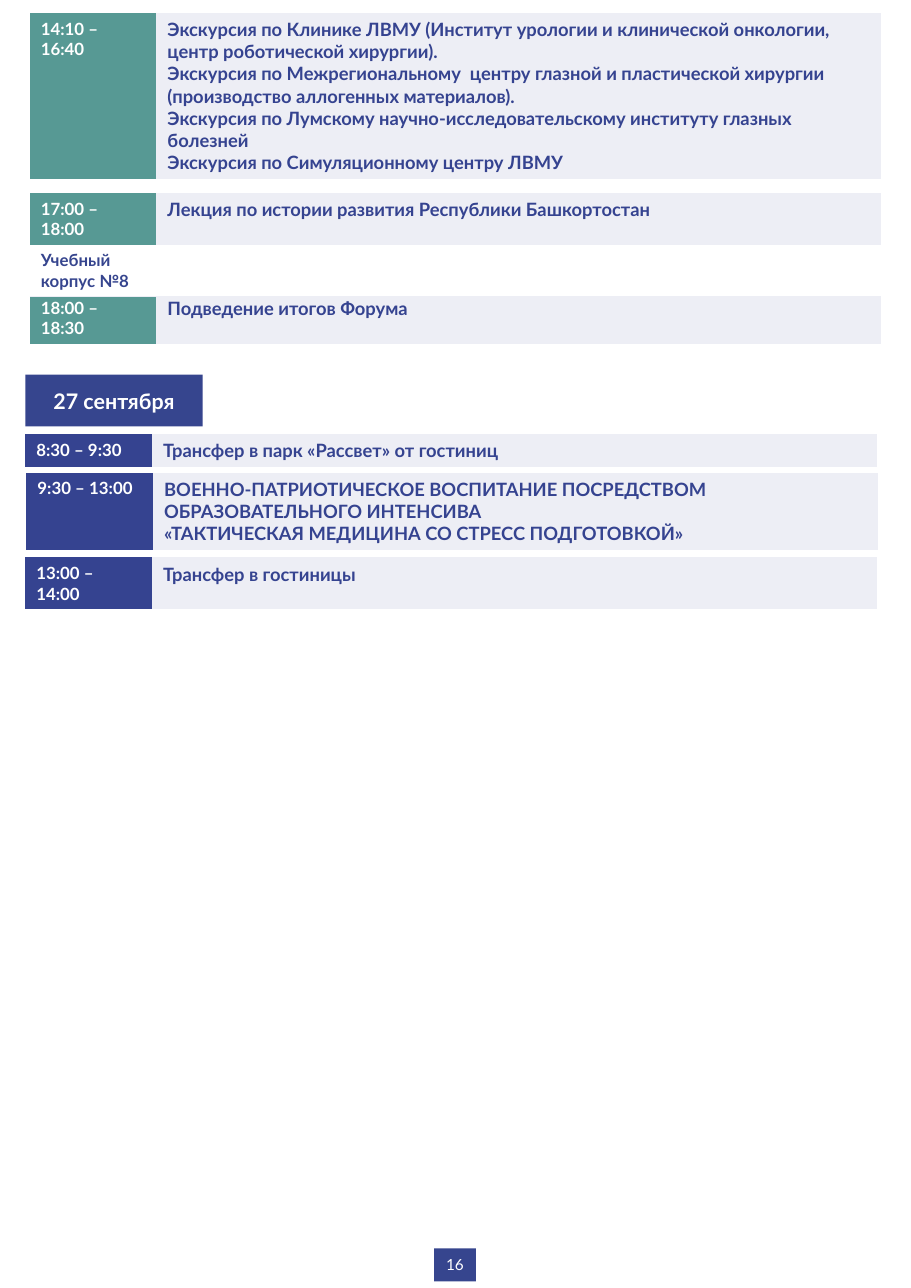
from dataclasses import dataclass

from lxml.etree import SubElement
from pptx import Presentation
from pptx.dml.color import RGBColor
from pptx.enum.shapes import MSO_SHAPE
from pptx.enum.text import MSO_ANCHOR, PP_ALIGN
from pptx.oxml import parse_xml
from pptx.oxml.ns import nsdecls, qn
from pptx.slide import Slide
from pptx.table import _Cell
from pptx.text.text import TextFrame
from pptx.util import Inches, Pt

FONT = "Lato"
COLORS = {
    "white": "FFFFFF",
    "badge": "36458E",
    "navy": "354390",
    "teal": "579994",
    "pale": "EDEEF5",
}
TIME_WIDTH, EVENT_WIDTH = 1.15, 6.58
PLAIN_STYLE = "{2D5ABB26-0587-4C30-8999-92F81FD0307C}"


@dataclass
class Session:
    left: float
    top: float
    height: float
    accent: str
    time: str
    event: str
    venue: str = ""
    venue_height: float = 0.47


@dataclass
class Badge:
    left: float
    top: float
    width: float
    height: float
    label: str
    size: int
    bold: bool


SESSIONS = [
    Session(0.27, 2.65, 0.47, "teal", "18:00 – 18:30", "Подведение итогов Форума"),
    Session(0.27, 1.75, 0.47, "teal", "17:00 – 18:00",
            "Лекция по истории развития Республики Башкортостан", "Учебный корпус №8"),
    Session(0.27, 0.12, 1.5, "teal", "14:10 – 16:40",
            "Экскурсия по Клинике ЛВМУ (Институт урологии и клинической онкологии, "
            "центр роботической хирургии).\n"
            "Экскурсия по Межрегиональному  центру глазной и пластической хирургии "
            "(производство аллогенных материалов).\n"
            "Экскурсия по Лумскому научно-исследовательскому институту глазных болезней\n"
            "Экскурсия по Симуляционному центру ЛВМУ"),
    Session(0.23, 3.94, 0.3, "navy", "8:30 – 9:30", "Трансфер в парк «Рассвет» от гостиниц"),
    Session(0.24, 4.29, 0.7, "navy", "9:30 – 13:00",
            "ВОЕННО-ПАТРИОТИЧЕСКОЕ ВОСПИТАНИЕ ПОСРЕДСТВОМ ОБРАЗОВАТЕЛЬНОГО ИНТЕНСИВА\n"
            "«ТАКТИЧЕСКАЯ МЕДИЦИНА СО СТРЕСС ПОДГОТОВКОЙ»"),
    Session(0.23, 5.06, 0.47, "navy", "13:00 – 14:00", "Трансфер в гостиницы"),
]
BADGES = [
    Badge(3.94, 11.33, 0.38, 0.3, "16", 10, False),
    Badge(0.23, 3.4, 1.61, 0.47, "27 сентября", 14, True),
]


def rgb(color: str) -> RGBColor:
    return RGBColor.from_string(COLORS[color])


def write(frame: TextFrame, text: str, size: int, color: str, bold: bool = True) -> None:
    frame.text = text
    for paragraph in frame.paragraphs:
        for run in paragraph.runs:
            run.font.name = FONT
            run.font.size = Pt(size)
            run.font.bold = bold
            run.font.color.rgb = rgb(color)


def fill_cell(cell: _Cell, text: str, size: int, color: str, fill: str) -> None:
    cell.fill.solid()
    cell.fill.fore_color.rgb = rgb(fill)
    if text:
        write(cell.text_frame, text, size, color)


def underline_cell(cell: _Cell) -> None:
    border = parse_xml(f'<a:lnB {nsdecls("a")} w="{Pt(1)}"/>')
    line_fill = SubElement(border, qn("a:solidFill"))
    SubElement(line_fill, qn("a:srgbClr"), val=COLORS["pale"])
    cell._tc.get_or_add_tcPr().insert(0, border)


def draw_session(slide: Slide, session: Session) -> None:
    heights = [session.height] + ([session.venue_height] if session.venue else [])
    frame = slide.shapes.add_table(
        len(heights), 2, Inches(session.left), Inches(session.top),
        Inches(TIME_WIDTH + EVENT_WIDTH), Inches(sum(heights)))
    table = frame.table
    table.first_row = table.horz_banding = False
    table._tbl.tblPr.find(qn("a:tableStyleId")).text = PLAIN_STYLE
    for column, width in zip(table.columns, (TIME_WIDTH, EVENT_WIDTH)):
        column.width = Inches(width)
    for row, height in zip(table.rows, heights):
        row.height = Inches(height)
    fill_cell(table.cell(0, 0), session.time, 11, "white", session.accent)
    fill_cell(table.cell(0, 1), session.event, 12, "navy", "pale")
    if session.venue:
        for column, text in enumerate((session.venue, "")):
            fill_cell(table.cell(1, column), text, 11, "badge", "white")
            underline_cell(table.cell(1, column))


def draw_badge(slide: Slide, badge: Badge) -> None:
    box = slide.shapes.add_shape(
        MSO_SHAPE.RECTANGLE, Inches(badge.left), Inches(badge.top),
        Inches(badge.width), Inches(badge.height))
    box.shadow.inherit = False
    box.fill.solid()
    box.fill.fore_color.rgb = rgb("badge")
    box.line.fill.background()
    write(box.text_frame, badge.label, badge.size, "white", badge.bold)
    box.text_frame.vertical_anchor = MSO_ANCHOR.MIDDLE
    box.text_frame.paragraphs[0].alignment = PP_ALIGN.CENTER


def main() -> None:
    deck = Presentation()
    deck.slide_width, deck.slide_height = Inches(8.27), Inches(11.69)
    slide = deck.slides.add_slide(deck.slide_layouts[6])
    for session in SESSIONS:
        draw_session(slide, session)
    for badge in BADGES:
        draw_badge(slide, badge)
    deck.save("out.pptx")


if __name__ == "__main__":
    main()
